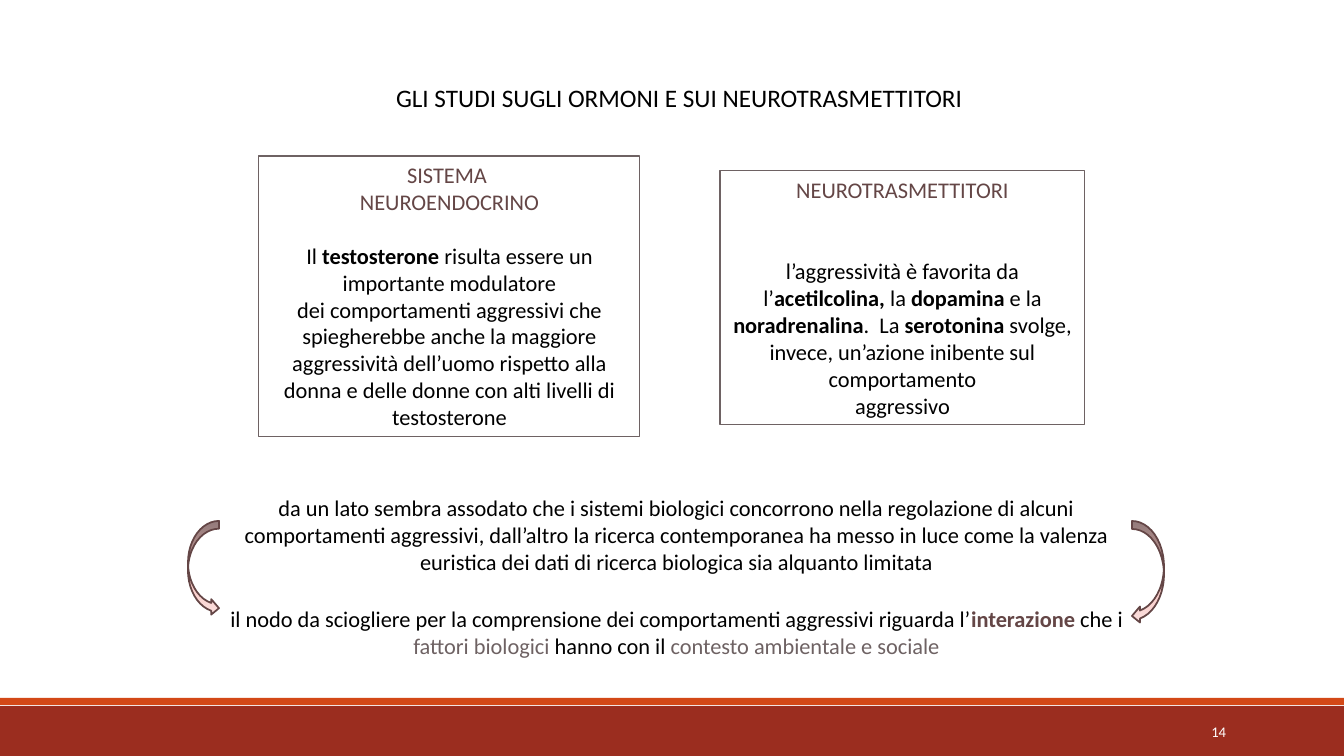
from copy import deepcopy

from pptx import Presentation
from pptx.dml.color import RGBColor
from pptx.enum.shapes import MSO_SHAPE
from pptx.enum.text import MSO_ANCHOR, MSO_AUTO_SIZE, PP_ALIGN
from pptx.oxml.ns import qn
from pptx.util import Emu, Pt

RECT = MSO_SHAPE.RECTANGLE
ARROW_LEFT_SIDE = MSO_SHAPE.CURVED_RIGHT_ARROW
ARROW_RIGHT_SIDE = MSO_SHAPE.CURVED_LEFT_ARROW
CENTER, RIGHT = PP_ALIGN.CENTER, PP_ALIGN.RIGHT
TOP, MIDDLE = MSO_ANCHOR.TOP, MSO_ANCHOR.MIDDLE
GROW, FIXED = MSO_AUTO_SIZE.SHAPE_TO_FIT_TEXT, MSO_AUTO_SIZE.NONE
SCALE = 914400 / 100.8
BLANK_LINE = 19.5

COLORS = {
    "black": "000000", "white": "FFFFFF", "brick": "9B2D1F", "orange": "D34817",
    "brown": "644646", "grey": "6E6263",
    "fade_top": "B99B9B", "fade_middle": "F8BFBA", "fade_bottom": "FBE0DE",
}


def px(length):
    return Emu(round(length * SCALE))


def rgb(name):
    return RGBColor.from_string(COLORS[name])


class SlideBuilder:
    """Holds the text style and the current slide, and adds its elements."""

    def __init__(self, slide, font="Calibri", size=16):
        self.slide = slide
        self.font = font
        self.size = size

    def compose(self, holder, paragraphs, size=None, align=CENTER, anchor=TOP, fit=GROW):
        frame = holder.text_frame
        layout = {"word_wrap": True, "auto_size": fit, "vertical_anchor": anchor}
        for name, value in layout.items():
            setattr(frame, name, value)
        for index, (space, runs) in enumerate(paragraphs):
            paragraph = frame.add_paragraph() if index else frame.paragraphs[0]
            spacing = {"alignment": align, "line_spacing": 1.0,
                       "space_before": Pt(space), "space_after": Pt(0)}
            for name, value in spacing.items():
                setattr(paragraph, name, value)
            for words, color, bold in runs:
                run = paragraph.add_run()
                run.text = words
                style = {"name": self.font, "size": Pt(size or self.size), "bold": bold}
                for name, value in style.items():
                    setattr(run.font, name, value)
                run.font.color.rgb = rgb(color)

    def title(self, box, words, size):
        heading = self.slide.shapes.title
        for name, value in zip(("left", "top", "width", "height"), box):
            setattr(heading, name, px(value))
        self.compose(heading, [(0, [plain(words)])], size)

    def text(self, box, paragraphs, **style):
        area = self.slide.shapes.add_textbox(*map(px, box))
        self.compose(area, paragraphs, **style)

    def shape(self, kind, box, fill=None, line=None, weight=0.75):
        figure = self.slide.shapes.add_shape(kind, *map(px, box))
        figure.shadow.inherit = False
        if fill:
            figure.fill.solid()
            figure.fill.fore_color.rgb = rgb(fill)
        else:
            figure.fill.background()
        if line:
            figure.line.color.rgb = rgb(line)
            figure.line.width = Pt(weight)
        else:
            figure.line.fill.background()
        return figure

    def card(self, box, paragraphs):
        self.compose(self.shape(RECT, box, line="grey"), paragraphs)

    def arrow(self, kind, box, fade):
        curve = self.shape(kind, box, line="brown", weight=1.25)
        curve.fill.gradient()
        curve.fill.gradient_angle = 270
        first_stop = next(curve.element.iter(qn("a:gs")))
        first_stop.addnext(deepcopy(first_stop))
        for index, (stop, color) in enumerate(zip(curve.fill.gradient_stops, fade)):
            stop.position = index / (len(fade) - 1)
            stop.color.rgb = rgb(color)


def plain(words, color="black"):
    return (words, color, False)


def strong(words, color="black"):
    return (words, color, True)


def main():
    deck = Presentation()
    deck.slide_width, deck.slide_height = px(1344), px(756)
    page = SlideBuilder(deck.slides.add_slide(deck.slide_layouts[5]))

    page.shape(RECT, (0, 706, 1344, 50), fill="brick")
    page.shape(RECT, (0, 698, 1344, 7), fill="orange")
    page.text((1092, 712, 144, 40), [(0, [plain("14", "white")])],
              size=10.5, align=RIGHT, anchor=MIDDLE, fit=FIXED)
    page.title((220, 77, 913, 41), " GLI STUDI SUGLI ORMONI E SUI NEUROTRASMETTITORI", 18)

    page.card((259, 156, 381, 281), [
        (0, [plain("SISTEMA ", "brown")]),
        (0, [plain("NEUROENDOCRINO", "brown")]),
        (BLANK_LINE, [plain("Il"), strong(" testosterone "),
                      plain("risulta essere un importante modulatore")]),
        (0, [plain("dei comportamenti aggressivi che spiegherebbe anche la maggiore")]),
        (0, [plain("aggressività dell’uomo rispetto alla donna e delle donne "
                   "con alti livelli di testosterone")]),
    ])
    page.card((720, 171, 365, 254), [
        (0, [plain("NEUROTRASMETTITORI", "brown")]),
        (2 * BLANK_LINE, [
            plain("l’aggressività è favorita da l’"), strong("acetilcolina, "),
            plain("la "), strong("dopamina"), plain(" e la "), strong("noradrenalina"),
            plain(".  La "), strong("serotonina"),
            plain(" svolge, invece, un’azione inibente sul comportamento")]),
        (0, [plain("aggressivo")]),
    ])

    page.text((220, 489, 913, 92), [(0, [plain(
        "da un lato sembra assodato che i sistemi biologici concorrono nella regolazione "
        "di alcuni comportamenti aggressivi, dall’altro la ricerca contemporanea ha messo "
        "in luce come la valenza euristica dei dati di ricerca biologica sia alquanto "
        "limitata")])])
    page.text((220, 600, 913, 65), [(0, [
        plain("il nodo da sciogliere per la comprensione dei comportamenti aggressivi "
              "riguarda l’"),
        strong("interazione", "brown"), plain(" che i "),
        plain("fattori biologici ", "grey"), plain("hanno con il "),
        plain("contesto ambientale e sociale", "grey")])])

    fade = ("fade_top", "fade_middle", "fade_bottom")
    page.arrow(ARROW_LEFT_SIDE, (188, 521, 31, 95), fade)
    page.arrow(ARROW_RIGHT_SIDE, (1132, 521, 32, 103), fade)
    deck.save("out.pptx")


if __name__ == "__main__":
    main()
